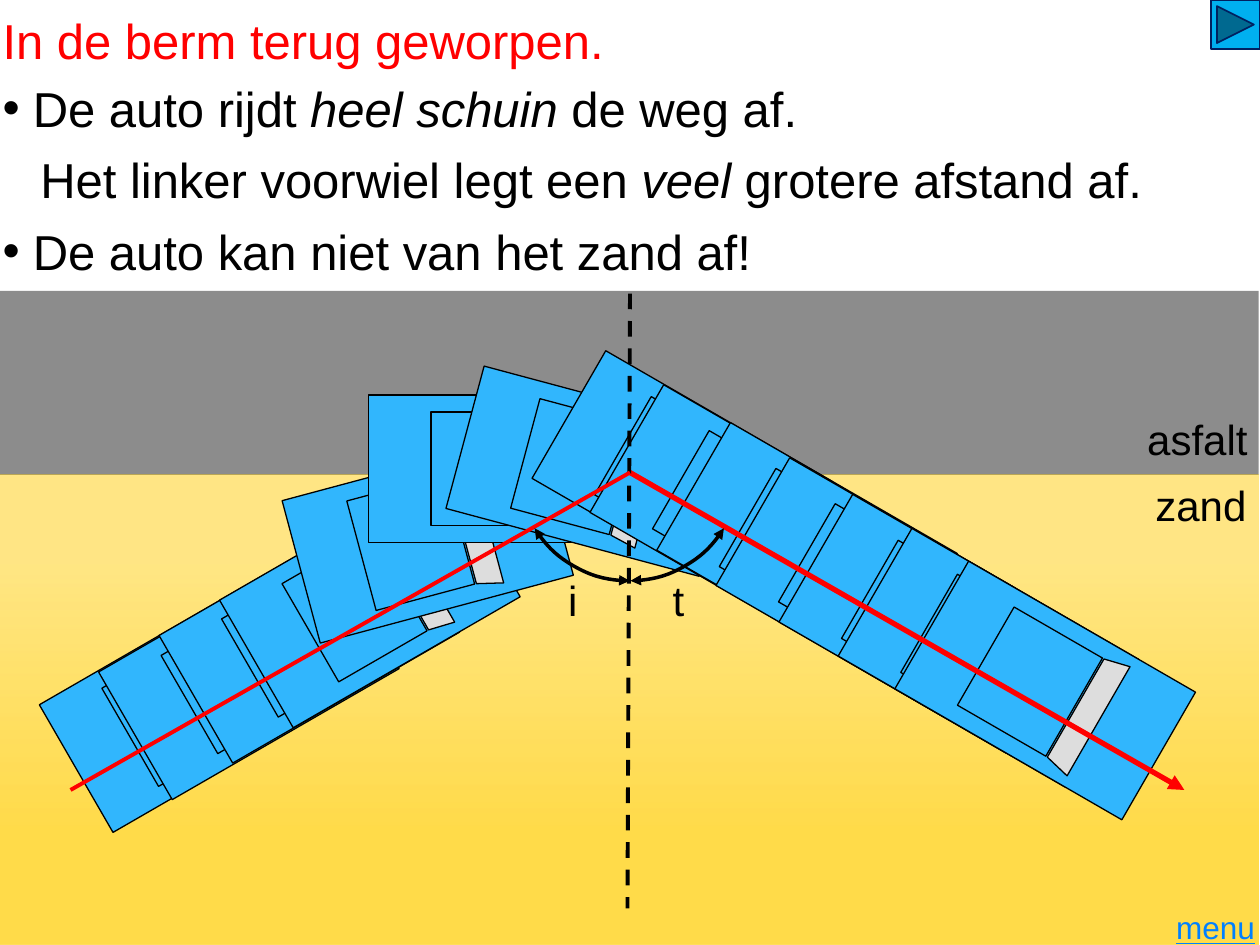
import math

from lxml import etree
from pptx import Presentation
from pptx import util as u
from pptx.dml.color import RGBColor
from pptx.enum import dml, shapes, text
from pptx.oxml import ns

COLORS = {
    "ink": "000000", "title": "FF0000", "ray": "FF0000", "asphalt": "808080",
    "sand": "FFCC00", "car": "31B6FD", "window": "DDDDDD", "link": "0080FF",
    "button": "00B0F0", "button_line": "002060",
}
COLUMNS, ROWS = 100, 75  # square grid cells
FONT = "Arial"


def rgb(name):
    return RGBColor.from_string(COLORS[name])


def add_text(paragraph, content, size=24, color="ink", italic=False, underline=False):
    run = paragraph.add_run()
    run.text = content
    run.font.name, run.font.size = FONT, u.Pt(size)
    run.font.color.rgb = rgb(color)
    run.font.italic, run.font.underline = italic, underline


def add_element(parent, tag, **attributes):
    element = etree.SubElement(parent, ns.qn(tag))
    for key, value in attributes.items():
        element.set(key, str(value))
    return element


def set_alpha(color_element, percent):
    add_element(color_element, "a:alpha", val=percent * 1000)


class SlideBuilder:
    def __init__(self, presentation):
        self.slide = presentation.slides.add_slide(presentation.slide_layouts[1])
        self.column = presentation.slide_width / COLUMNS
        self.row = presentation.slide_height / ROWS

    def cells(self, across, down):
        return u.Emu(round(across * self.column)), u.Emu(round(down * self.row))

    def box(self, left, top, width, height):
        return *self.cells(left, top), *self.cells(width, height)

    def style(self, shape, fill=None, line=None, weight=0.75):
        shape.shadow.inherit = False
        if fill:
            shape.fill.solid()
            shape.fill.fore_color.rgb = rgb(fill)
        else:
            shape.fill.background()
        if line:
            shape.line.color.rgb = rgb(line)
            shape.line.width = u.Pt(weight)
        else:
            shape.line.fill.background()
        return shape

    def shape(self, kind, box, parent=None, rotation=0, **style):
        shape = (parent or self.slide).shapes.add_shape(kind, *self.box(*box))
        shape.rotation = rotation
        return self.style(shape, **style)

    def arrowheads(self, shape, *ends):
        line = shape.element.spPr.find(ns.qn("a:ln"))
        for end in ends:
            add_element(line, f"a:{end}", type="triangle")

    def line(self, start, end, color, weight, dash=None, arrow=False):
        connector = self.slide.shapes.add_connector(
            shapes.MSO_CONNECTOR.STRAIGHT, *self.cells(*start), *self.cells(*end))
        connector.line.color.rgb = rgb(color)
        connector.line.width = u.Pt(weight)
        if dash:
            connector.line.dash_style = dash
        if arrow:
            self.arrowheads(connector, "a:tailEnd"[2:])
        add_element(connector.element.spPr, "a:effectLst")

    def arc(self, box, start, end):
        arc = self.shape(shapes.MSO_SHAPE.ARC, box, line="ink", weight=2)
        # Adjustments count 100000ths of the 60000 units in a degree
        arc.adjustments[0], arc.adjustments[1] = start * 0.6, end * 0.6
        self.arrowheads(arc, "headEnd", "tailEnd")

    def label(self, content, box, align=text.PP_ALIGN.LEFT, inset=None, **font):
        label = self.slide.shapes.add_textbox(*self.box(*box))
        frame = label.text_frame
        frame.word_wrap = True
        if inset is not None:
            frame.margin_left = frame.margin_right = u.Inches(inset)
            frame.margin_top = frame.margin_bottom = u.Inches(inset)
            frame.vertical_anchor = text.MSO_ANCHOR.MIDDLE
        frame.paragraphs[0].alignment = align
        add_text(frame.paragraphs[0], content, **font)

    def placeholder(self, index, box):
        shape = self.slide.placeholders[index]
        shape.left, shape.top, shape.width, shape.height = self.box(*box)
        frame = shape.text_frame
        frame.word_wrap = True
        frame.auto_size = text.MSO_AUTO_SIZE.NONE
        frame.vertical_anchor = text.MSO_ANCHOR.TOP
        return frame

    def title(self, content, box):
        paragraph = self.placeholder(0, box).paragraphs[0]
        paragraph.alignment = text.PP_ALIGN.LEFT
        add_text(paragraph, content, size=28, color="title")

    def bullets(self, items, box):
        """Each item is a bullet flag and runs, of which every second is italic."""
        frame = self.placeholder(1, box)
        for number, (bullet, runs) in enumerate(items):
            paragraph = frame.add_paragraph() if number else frame.paragraphs[0]
            paragraph.space_before = u.Pt(7.2 if number else 0)
            properties = paragraph._p.get_or_add_pPr()
            indent = u.Inches(0.24 if bullet else 0.3)
            properties.set("marL", str(indent))
            properties.set("indent", str(-indent if bullet else 0))
            if bullet:
                add_element(properties, "a:buFont", typeface=FONT)
                add_element(properties, "a:buChar", char="•")
            else:
                add_element(properties, "a:buNone")
            for position, content in enumerate(runs):
                add_text(paragraph, content, size=28, italic=position % 2 == 1)

    def car(self, center_x, center_y, rotation):
        heading = math.radians(rotation - 90)
        cosine, sine = math.cos(heading), math.sin(heading)
        group = self.slide.shapes.add_group_shape()

        def place(forward, side=0):
            return (center_x + forward * cosine - side * sine,
                    center_y + forward * sine + side * cosine)

        def block(forward, width, length):
            x, y = place(forward)
            self.shape(shapes.MSO_SHAPE.RECTANGLE,
                       (x - width / 2, y - length / 2, width, length),
                       group, rotation, fill="car", line="ink")

        block(0, 11.7, 20.8)  # body
        window = [self.cells(*place(*point))
                  for point in ((4.9, -5), (2.8, -4.5), (2.8, 4.5), (4.9, 5))]
        builder = group.shapes.build_freeform(*window[0])
        builder.add_line_segments(window[1:], close=True)
        self.style(builder.convert_to_shape(), fill="window", line="ink")
        block(-1.4, 9, 8.1)  # cabin


def main():
    presentation = Presentation()
    presentation.slide_width, presentation.slide_height = u.Inches(10), u.Inches(7.5)
    page = SlideBuilder(presentation)
    rectangle = shapes.MSO_SHAPE.RECTANGLE
    right = text.PP_ALIGN.RIGHT

    # Road and verge
    asphalt = page.shape(rectangle, (-0.5, 23.1, 100.4, 14.6), fill="asphalt")
    set_alpha(asphalt.element.spPr.find(".//" + ns.qn("a:srgbClr")), 90)
    sand = page.shape(rectangle, (-0.5, 37.65, 100.4, 37.4))
    sand.fill.gradient()
    sand.fill.gradient_angle = 270
    for stop, position, alpha in zip(sand.fill.gradient_stops, (0.19, 0.76), (48, 71)):
        stop.position = position
        stop.color.rgb = rgb("sand")
    for color, alpha in zip(sand.element.spPr.iter(ns.qn("a:srgbClr")), (48, 71)):
        set_alpha(color, alpha)
    page.label("asfalt", (83.3, 32.3, 16.7, 5.1), right)
    page.label("zand", (84.9, 37.6, 15, 5.1), right)

    # Title and explanation
    page.title("In de berm terug geworpen.", (-0.8, 0.3, 85, 5.7))
    page.bullets([
        (True, ["De auto rijdt ", "heel schuin ", "de weg af."]),
        (False, ["Het linker voorwiel legt een ", "veel ", "grotere afstand af."]),
        (True, ["De auto kan niet van het zand af!"]),
    ], (-0.8, 5.7, 100.8, 16.7))

    # Car positions: centre and rotation
    for position in (
        (15.05, 55.8, 60), (19.75, 53.2, 60), (24.55, 50.3, 60), (29.35, 47.5, 60),
        (33.95, 42.7, 75), (39.65, 37.2, 90), (46.95, 37.4, 105),
        (54.15, 38.1, 120), (58.75, 40.8, 120), (64.05, 43.8, 120), (68.75, 46.6, 120),
        (73.75, 49.5, 120), (78.45, 52.2, 120), (82.95, 54.8, 120),
    ):
        page.car(*position)

    # Rays and normal
    turn = (50, 37.5)
    page.line(turn, (94, 62.7), "ray", 3, arrow=True)
    page.line((50, 23.3), (49.8, 72.1), "ink", 2.25, dash=dml.MSO_LINE.DASH)
    page.line((5.6, 62.7), turn, "ray", 2.25)

    # Menu link, angles and next button
    page.label("menu", (92.5, 72.2, 7.5, 2.8), right, inset=0.04,
               size=18, color="link", underline=True)
    for name, left, start, end in (("i", 44.1, 89.8, 148.1), ("t", 52.4, 31.96, 89.37)):
        page.label(name, (left, 45.1, 7.5, 5))
        page.arc((41.1, 28.4, 17.7, 17.7), start, end)
    page.shape(shapes.MSO_SHAPE.ACTION_BUTTON_FORWARD_OR_NEXT, (96.1, 0, 3.9, 3.9),
               fill="button", line="button_line", weight=1)

    presentation.save("out.pptx")


if __name__ == "__main__":
    main()
